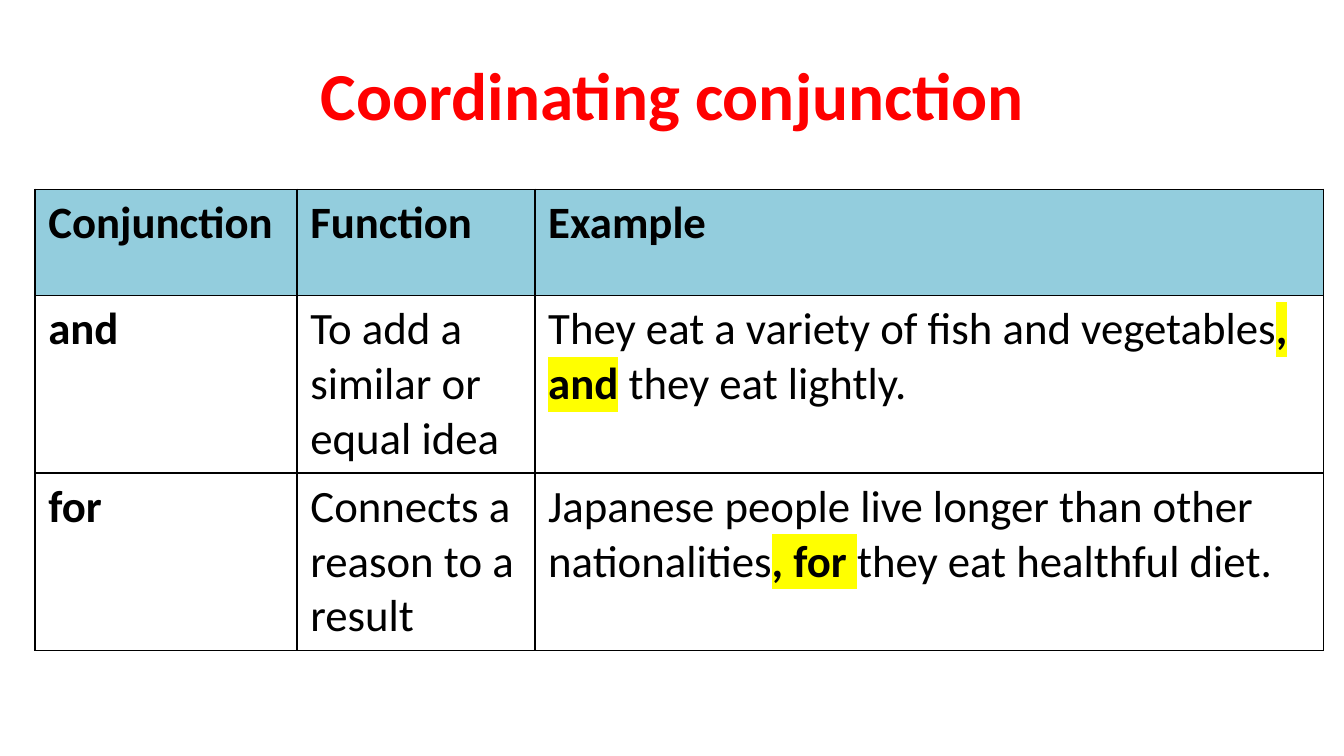
from dataclasses import dataclass

from lxml.etree import SubElement
from pptx import Presentation
from pptx.dml.color import RGBColor
from pptx.enum.text import MSO_ANCHOR, PP_ALIGN
from pptx.oxml.ns import qn
from pptx.util import Inches, Pt


@dataclass(frozen=True)
class Theme:
    font: str = "Calibri"
    title_size: int = 36
    table_size: int = 24
    border_width: int = 1
    title: str = "FF0000"
    text: str = "000000"
    border: str = "000000"
    header_fill: str = "93CDDD"
    highlight: str = "FFFF00"


THEME = Theme()

SLIDE_WIDTH = 10
SLIDE_HEIGHT = SLIDE_WIDTH * 9 / 16

HEADINGS = ["Conjunction", "Function", "Example"]
# Each example alternates plain and highlighted pieces, starting with plain.
CONJUNCTIONS = [
    ("and", "To add a similar or equal idea",
     ["They eat a variety of fish and vegetables", ",", " ", "and",
      " they eat lightly."]),
    ("for", "Connects a reason to a result",
     ["Japanese people live longer than other nationalities", ", for ",
      "they eat healthful diet."]),
]
COLUMN_WIDTHS = [1.95, 1.77, 5.87]
HEADER_HEIGHT = 0.79


def style_run(run, size, color, bold):
    run.font.name = THEME.font
    run.font.size = Pt(size)
    run.font.bold = bold
    run.font.color.rgb = RGBColor.from_string(color)


def highlight_run(run):
    properties = run.font._element
    highlight = SubElement(properties, qn("a:highlight"))
    SubElement(highlight, qn("a:srgbClr"), val=THEME.highlight)
    properties.find(qn("a:solidFill")).addnext(highlight)


def draw_borders(cell):
    properties = cell._tc.get_or_add_tcPr()
    for position, side in enumerate(("lnL", "lnR", "lnT", "lnB")):
        line = SubElement(properties, qn(f"a:{side}"),
                          w=str(int(Pt(THEME.border_width))))
        fill = SubElement(line, qn("a:solidFill"))
        SubElement(fill, qn("a:srgbClr"), val=THEME.border)
        properties.insert(position, line)


def fill_cell(cell, pieces, bold=False, fill=None):
    """Write pieces into the cell, highlighting every second one."""
    paragraph = cell.text_frame.paragraphs[0]
    for index, piece in enumerate(pieces):
        run = paragraph.add_run()
        run.text = piece
        highlighted = index % 2 == 1
        style_run(run, THEME.table_size, THEME.text, bold or highlighted)
        if highlighted:
            highlight_run(run)
    if fill:
        cell.fill.solid()
        cell.fill.fore_color.rgb = RGBColor.from_string(fill)
    else:
        cell.fill.background()
    draw_borders(cell)


def place_title(slide, left, top, width, height):
    title = slide.shapes.title
    title.left, title.top = Inches(left), Inches(top)
    title.width, title.height = Inches(width), Inches(height)
    frame = title.text_frame
    frame.text = "Coordinating conjunction"
    frame.vertical_anchor = MSO_ANCHOR.MIDDLE
    frame.paragraphs[0].alignment = PP_ALIGN.CENTER
    style_run(frame.paragraphs[0].runs[0], THEME.title_size, THEME.title, True)


def place_conjunction_table(slide, left, top, width, height):
    table = slide.shapes.add_table(
        len(CONJUNCTIONS) + 1, len(HEADINGS),
        Inches(left), Inches(top), Inches(width), Inches(height)).table
    table.first_row = table.horz_banding = False

    for column, share in zip(table.columns, COLUMN_WIDTHS):
        column.width = Inches(width * share / sum(COLUMN_WIDTHS))
    body_height = (height - HEADER_HEIGHT) / len(CONJUNCTIONS)
    for index, row in enumerate(table.rows):
        row.height = Inches(body_height if index else HEADER_HEIGHT)

    for column, heading in enumerate(HEADINGS):
        fill_cell(table.cell(0, column), [heading], True, THEME.header_fill)
    for row, (word, function, example) in enumerate(CONJUNCTIONS, start=1):
        fill_cell(table.cell(row, 0), [word], bold=True)
        fill_cell(table.cell(row, 1), [function])
        fill_cell(table.cell(row, 2), example)


def main():
    presentation = Presentation()
    presentation.slide_width = Inches(SLIDE_WIDTH)
    presentation.slide_height = Inches(SLIDE_HEIGHT)
    title_only = presentation.slide_layouts[5]
    slide = presentation.slides.add_slide(title_only)
    place_title(slide, 0.49, 0.28, 9.03, 0.84)
    place_conjunction_table(slide, 0.26, 1.41, 9.59, 3.41)
    presentation.save("out.pptx")


if __name__ == "__main__":
    main()
